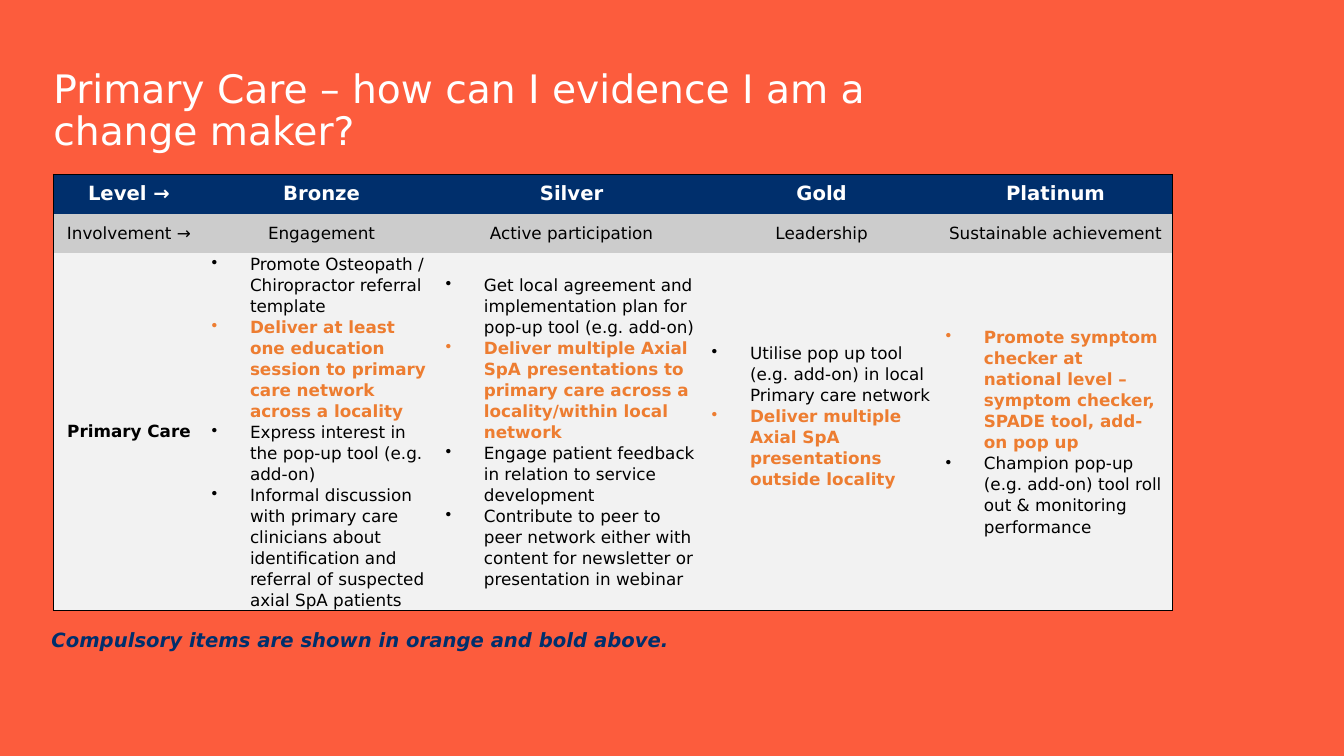
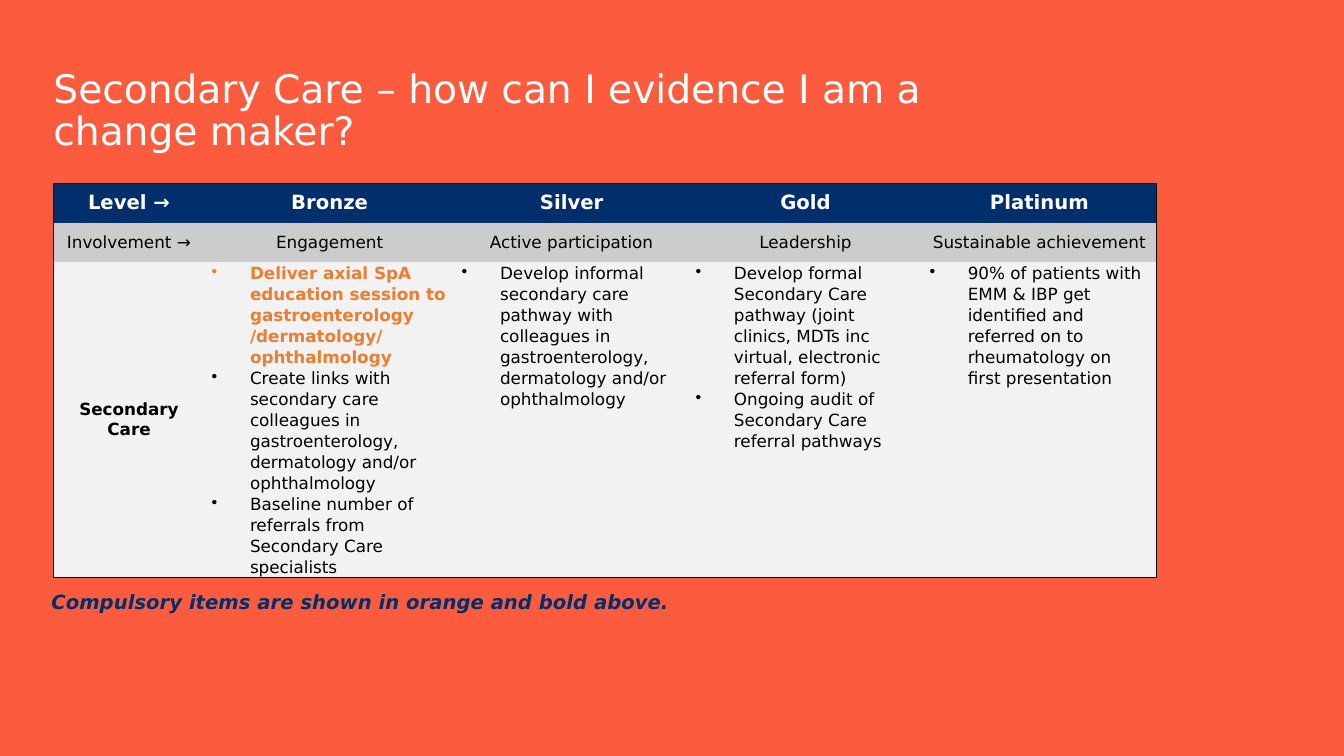
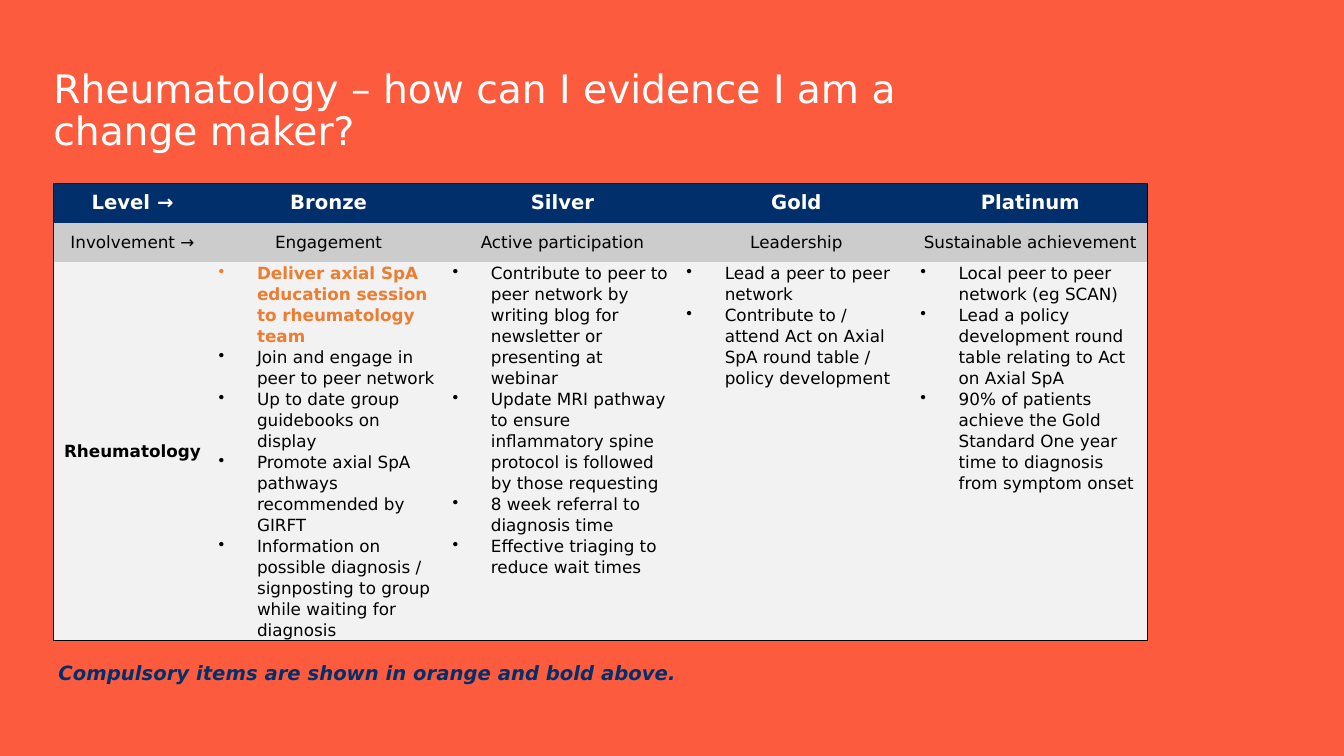
"""Build three change maker evidence slides, each with a level table."""
from pptx import Presentation
from pptx.dml.color import RGBColor
from pptx.enum.text import MSO_ANCHOR, MSO_AUTO_SIZE, PP_ALIGN
from pptx.oxml.ns import qn
from pptx.util import Inches, Pt
from lxml.etree import SubElement

CORAL = RGBColor(0xFC, 0x5C, 0x3D)
NAVY = RGBColor(0x00, 0x2F, 0x6C)
ORANGE = RGBColor(0xED, 0x7D, 0x31)
GREY = RGBColor(0xCC, 0xCC, 0xCC)
PALE = RGBColor(0xF2, 0xF2, 0xF2)
WHITE = RGBColor(0xFF, 0xFF, 0xFF)
BLACK = RGBColor(0x00, 0x00, 0x00)
FONT = "DejaVu Sans"

TITLE = {"size": Pt(28), "bold": False, "color": WHITE}
LEVEL = {"size": Pt(14), "bold": True, "color": WHITE}
INVOLVEMENT = {"size": Pt(12), "bold": False, "color": BLACK}
AREA = {"size": Pt(12), "bold": True, "color": BLACK}
OPTIONAL = INVOLVEMENT
COMPULSORY = {"size": Pt(12), "bold": True, "color": ORANGE}
CAPTION = {"size": Pt(14), "bold": True, "italic": True, "color": NAVY}

HEADINGS = [
    (["Level →", "Bronze", "Silver", "Gold", "Platinum"], LEVEL, NAVY),
    (["Involvement →", "Engagement", "Active participation", "Leadership",
      "Sustainable achievement"], INVOLVEMENT, GREY),
]
HEADING_HEIGHT = 0.39

SLIDES = [
    {
        "area": "Primary Care", "top": 1.73, "height": 3.55,
        "cols": [1.5, 2.32, 2.64, 2.32, 2.32], "caption": (0.21, 6.18),
        "anchor": MSO_ANCHOR.MIDDLE, "bottoms": [0, 0, 0.32, 0],
        "levels": [
            (1, ["Promote Osteopath / Chiropractor referral template",
                 "Deliver at least one education session to primary care network across a locality",
                 "Express interest in the pop-up tool (e.g. add-on)",
                 "Informal discussion with primary care clinicians about identification and "
                 "referral of suspected axial SpA patients"]),
            (1, ["Get local agreement and implementation plan for pop-up tool (e.g. add-on)",
                 "Deliver multiple Axial SpA presentations to primary care across a "
                 "locality/within local network",
                 "Engage patient feedback in relation to service development",
                 "Contribute to peer to peer network either with content for newsletter or "
                 "presentation in webinar"]),
            (1, ["Utilise pop up tool (e.g. add-on) in local Primary care network",
                 "Deliver multiple Axial SpA presentations outside locality"]),
            (0, ["Promote symptom checker at national level – symptom checker, SPADE tool, "
                 "add-on pop up",
                 "Champion pop-up (e.g. add-on) tool roll out & monitoring performance"]),
        ],
    },
    {
        "area": "Secondary Care", "top": 1.82, "height": 3.12,
        "cols": [1.5, 2.48, 2.32, 2.32, 2.32], "caption": (0.21, 5.8),
        "anchor": MSO_ANCHOR.TOP, "bottoms": [0, 0, 0, 0],
        "levels": [
            (0, ["Deliver axial SpA education session to gastroenterology /dermatology/ "
                 "ophthalmology",
                 "Create links with secondary care colleagues in gastroenterology, "
                 "dermatology and/or ophthalmology",
                 "Baseline number of referrals from Secondary Care specialists"]),
            (None, ["Develop informal secondary care pathway with colleagues in "
                    "gastroenterology, dermatology and/or ophthalmology"]),
            (None, ["Develop formal Secondary Care pathway (joint clinics, MDTs inc virtual, "
                    "electronic referral form)",
                    "Ongoing audit of Secondary Care referral pathways"]),
            (None, ["90% of patients with EMM & IBP get identified and referred on to "
                    "rheumatology on first presentation"]),
        ],
    },
    {
        "area": "Rheumatology", "top": 1.82, "height": 3.75,
        "cols": [1.57, 2.32, 2.32, 2.32, 2.32], "caption": (0.28, 6.51),
        "anchor": MSO_ANCHOR.TOP, "bottoms": [0, 0, 0, 0],
        "levels": [
            (0, ["Deliver axial SpA education session to rheumatology team",
                 "Join and engage in peer to peer network",
                 "Up to date group guidebooks on display",
                 "Promote axial SpA pathways recommended by GIRFT",
                 "Information on possible diagnosis / signposting to group while waiting for "
                 "diagnosis"]),
            (None, ["Contribute to peer to peer network by writing blog for newsletter or "
                    "presenting at webinar",
                    "Update MRI pathway to ensure inflammatory spine protocol is followed by "
                    "those requesting",
                    "8 week referral to diagnosis time",
                    "Effective triaging to reduce wait times"]),
            (None, ["Lead a peer to peer network",
                    "Contribute to / attend Act on Axial SpA round table / policy development"]),
            (None, ["Local peer to peer network (eg SCAN)",
                    "Lead a policy development round table relating to Act on Axial SpA",
                    "90% of patients achieve the Gold Standard One year time to diagnosis "
                    "from symptom onset"]),
        ],
    },
]


def add_run(p, text, style):
    r = p.add_run()
    r.text = text
    r.font.name = FONT
    for name, value in style.items():
        if name == "color":
            r.font.color.rgb = value
        else:
            setattr(r.font, name, value)


def format_cell(cell, fill, edges):
    tcPr = cell._tc.get_or_add_tcPr()
    for side in "LRTB":
        ln = SubElement(tcPr, qn("a:ln" + side), w=str(Pt(1)))
        if side in edges:
            color = SubElement(SubElement(ln, qn("a:solidFill")), qn("a:srgbClr"))
            color.set("val", str(BLACK))
        else:
            SubElement(ln, qn("a:noFill"))
    cell.fill.solid()
    cell.fill.fore_color.rgb = fill
    cell.vertical_anchor = MSO_ANCHOR.MIDDLE


prs = Presentation()
prs.slide_width, prs.slide_height = Inches(13.33), Inches(7.5)
bg = prs.slide_master.background.fill
bg.solid()
bg.fore_color.rgb = CORAL

for data in SLIDES:
    s = prs.slides.add_slide(prs.slide_layouts[5])

    title = s.shapes.title
    title.left, title.top = Inches(0.53), Inches(0.62)
    title.width, title.height = Inches(9.51), Inches(0.98)
    tf = title.text_frame
    for name, value in {"margin_left": 0, "margin_right": 0, "word_wrap": True,
                        "auto_size": MSO_AUTO_SIZE.NONE,
                        "vertical_anchor": MSO_ANCHOR.MIDDLE}.items():
        setattr(tf, name, value)
    p = tf.paragraphs[0]
    p.alignment, p.line_spacing = PP_ALIGN.LEFT, 0.9
    add_run(p, data["area"] + " – how can I evidence I am a change maker?", TITLE)

    heights = [HEADING_HEIGHT, HEADING_HEIGHT, data["height"]]
    table = s.shapes.add_table(3, 5, Inches(0.53), Inches(data["top"]),
                               Inches(sum(data["cols"])), Inches(sum(heights))).table
    table.horz_banding = False
    for col, width in zip(table.columns, data["cols"]):
        col.width = Inches(width)
    for row, height in zip(table.rows, heights):
        row.height = Inches(height)

    rows = HEADINGS + [([data["area"]], AREA, PALE)]
    for i, (texts, style, fill) in enumerate(rows):
        for j in range(5):
            edges = ("L" * (j == 0) + "R" * (j == 4) + "T" * (i == 0) + "B" * (i == 2))
            format_cell(table.cell(i, j), fill, edges)
        for j, text in enumerate(texts):
            p = table.cell(i, j).text_frame.paragraphs[0]
            p.alignment = PP_ALIGN.CENTER
            add_run(p, text, style)

    for j, ((compulsory, items), bottom) in enumerate(zip(data["levels"], data["bottoms"]), 1):
        cell = table.cell(2, j)
        for name, value in {"margin_left": Inches(0.07), "margin_right": Inches(0.07),
                            "margin_top": 0, "margin_bottom": Inches(bottom),
                            "vertical_anchor": data["anchor"]}.items():
            setattr(cell, name, value)
        tf = cell.text_frame
        for k, item in enumerate(items):
            p = tf.add_paragraph() if k else tf.paragraphs[0]
            pPr = p._p.get_or_add_pPr()
            pPr.set("marL", str(Inches(0.38)))
            pPr.set("indent", str(-Inches(0.38)))
            SubElement(pPr, qn("a:buChar"), char="•")
            p.line_spacing = 1.07
            add_run(p, item, COMPULSORY if k == compulsory else OPTIONAL)

    left, top = data["caption"]
    tf = s.shapes.add_textbox(Inches(left), Inches(top), Inches(12.52), Inches(0.7)).text_frame
    tf.word_wrap, tf.margin_left = True, 0
    p = tf.paragraphs[0]
    p.alignment, p.space_after = PP_ALIGN.JUSTIFY, Pt(6)
    p._p.get_or_add_pPr().set("marL", str(Inches(0.3)))
    add_run(p, "Compulsory items are shown in orange and bold above.", CAPTION)

prs.save("out.pptx")
